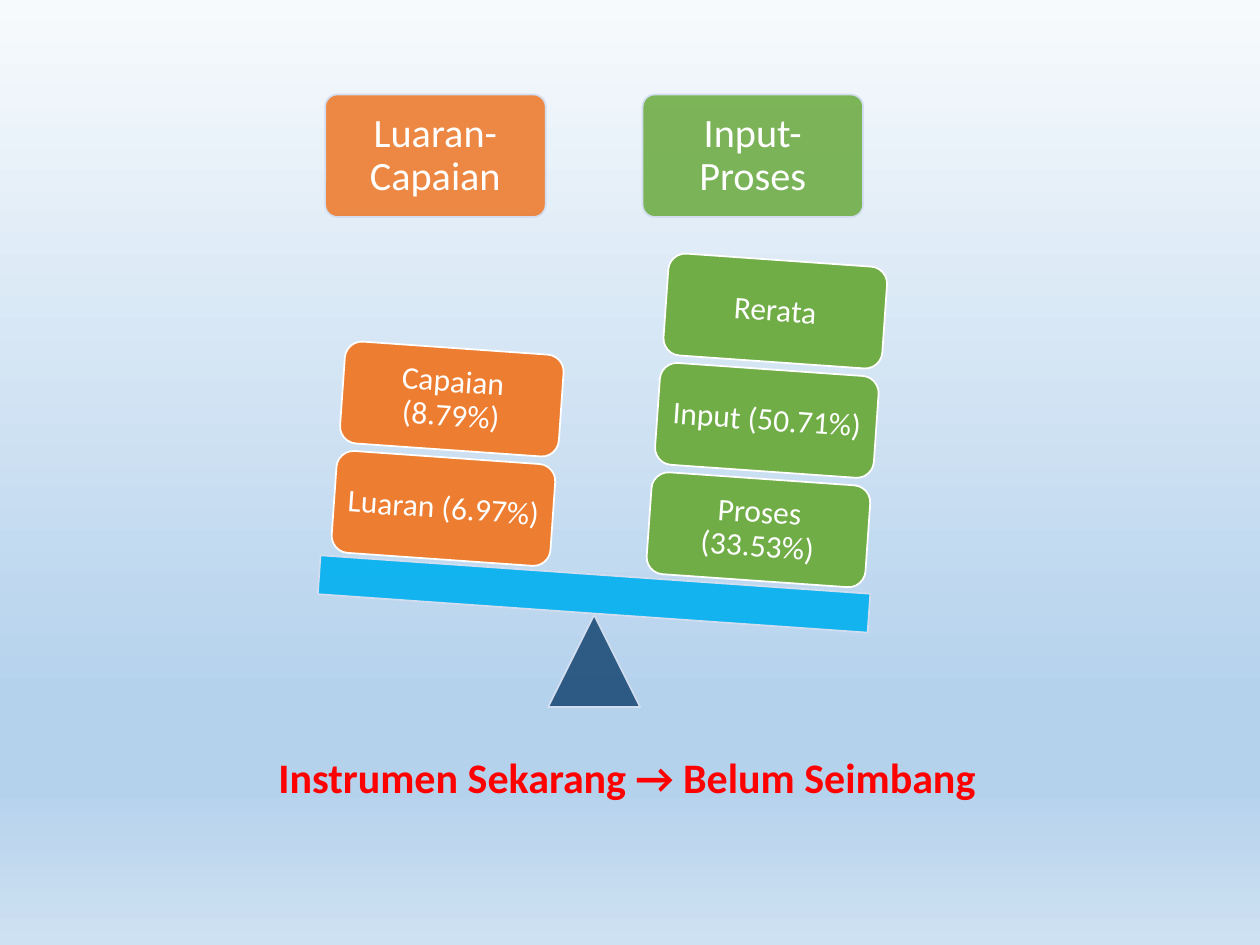
from lxml.etree import SubElement
from pptx import Presentation
from pptx.dml.color import RGBColor
from pptx.enum.shapes import MSO_SHAPE
from pptx.enum.text import MSO_ANCHOR, MSO_AUTO_SIZE, PP_ALIGN
from pptx.oxml.ns import qn
from pptx.util import Pt

ORANGE, GREEN, PALE, WHITE = "ED7D31", "70AD47", "D2DEEF", "FFFFFF"
TILT = 4
STOPS = [(0, "F7FAFD"), (74, "B5D2EC"), (83, "B5D2EC"), (100, "CEE1F2")]
# Each side: head, colour, head x, first block x and y, blocks from the beam up
SIDES = [
    ("Luaran-Capaian", ORANGE, 3.8, 8.8, 207.4,
     ["Luaran (6.97%)", "Capaian (8.79%)"]),
    ("Input-Proses", GREEN, 185.2, 188.8, 219.6,
     ["Proses (33.53%)", "Input (50.71%)", "Rerata"]),
]


def paint(color, tint):
    color.rgb = RGBColor.from_string(tint)


def add_run(para, text, size, tint, bold=False):
    run = para.add_run()
    run.text = text
    run.font.name, run.font.size, run.font.bold = "Calibri", Pt(size), bold
    paint(run.font.color, tint)


def add_part(slide, kind, box, fill, line, turn=0, clear=False):
    part = slide.shapes.add_shape(kind, *map(Pt, box))
    part.shadow.inherit = False
    part.rotation = turn
    part.fill.solid()
    paint(part.fill.fore_color, fill)
    paint(part.line.color, line)
    part.line.width = Pt(1)
    if clear:
        tone = part.element.spPr.find(qn("a:solidFill"))[0]
        SubElement(tone, qn("a:alpha"), val="90000")
    return part


def add_label(part, text, size, inset):
    frame = part.text_frame
    frame.word_wrap = True
    frame.vertical_anchor = MSO_ANCHOR.MIDDLE
    frame.margin_left = frame.margin_right = Pt(inset)
    frame.margin_top = frame.margin_bottom = Pt(inset)
    para = frame.paragraphs[0]
    para.alignment = PP_ALIGN.CENTER
    para.line_spacing = 0.9
    add_run(para, text, size, WHITE)


def add_back(slide):
    fill = slide.background.fill
    fill.gradient()
    fill.gradient_angle = 270
    stops = next(slide.element.iter(qn("a:gsLst")))
    stops.clear()
    for pos, tint in STOPS:
        stop = SubElement(stops, qn("a:gs"), pos=str(pos * 1000))
        SubElement(stop, qn("a:srgbClr"), val=tint)


def add_scale(slide, left, top, width):
    # Pivot and tilted beam
    pivot = 52.6
    add_part(slide, MSO_SHAPE.ISOSCELES_TRIANGLE,
             (left + (width - pivot) / 2, top + 297.4, pivot, pivot),
             "1F4E79", PALE, clear=True)
    add_part(slide, MSO_SHAPE.RECTANGLE, (left, top + 274.3, width, 22.3),
             "00B0F0", PALE, TILT, True)

    for head, tint, head_x, x, y, names in SIDES:
        # Head above the stack
        part = add_part(slide, MSO_SHAPE.ROUNDED_RECTANGLE,
                        (left + head_x, top, 126, 70), tint, PALE, clear=True)
        part.adjustments[0] = 0.1
        add_label(part, head, 23, 7)
        # Blocks, stacked along the tilt
        for i, name in enumerate(names):
            box = (left + x + 4.8 * i, top + y - 62.5 * i, 125.3, 58.3)
            part = add_part(slide, MSO_SHAPE.ROUNDED_RECTANGLE, box,
                            tint, WHITE, TILT)
            add_label(part, name, 18, 5)


def add_note(slide, left, top, width, height):
    frame = slide.shapes.add_textbox(
        Pt(left), Pt(top), Pt(width), Pt(height)).text_frame
    frame.word_wrap = False
    frame.auto_size = MSO_AUTO_SIZE.SHAPE_TO_FIT_TEXT
    add_run(frame.paragraphs[0], "Instrumen Sekarang → Belum Seimbang",
            24, "FF0000", True)


def main():
    deck = Presentation()
    deck.slide_width, deck.slide_height = Pt(720), Pt(540)
    slide = deck.slides.add_slide(deck.slide_layouts[6])
    add_back(slide)
    add_scale(slide, 182, 54, 315)
    add_note(slide, 152, 426, 419, 36)
    deck.save("out.pptx")


if __name__ == "__main__":
    main()
